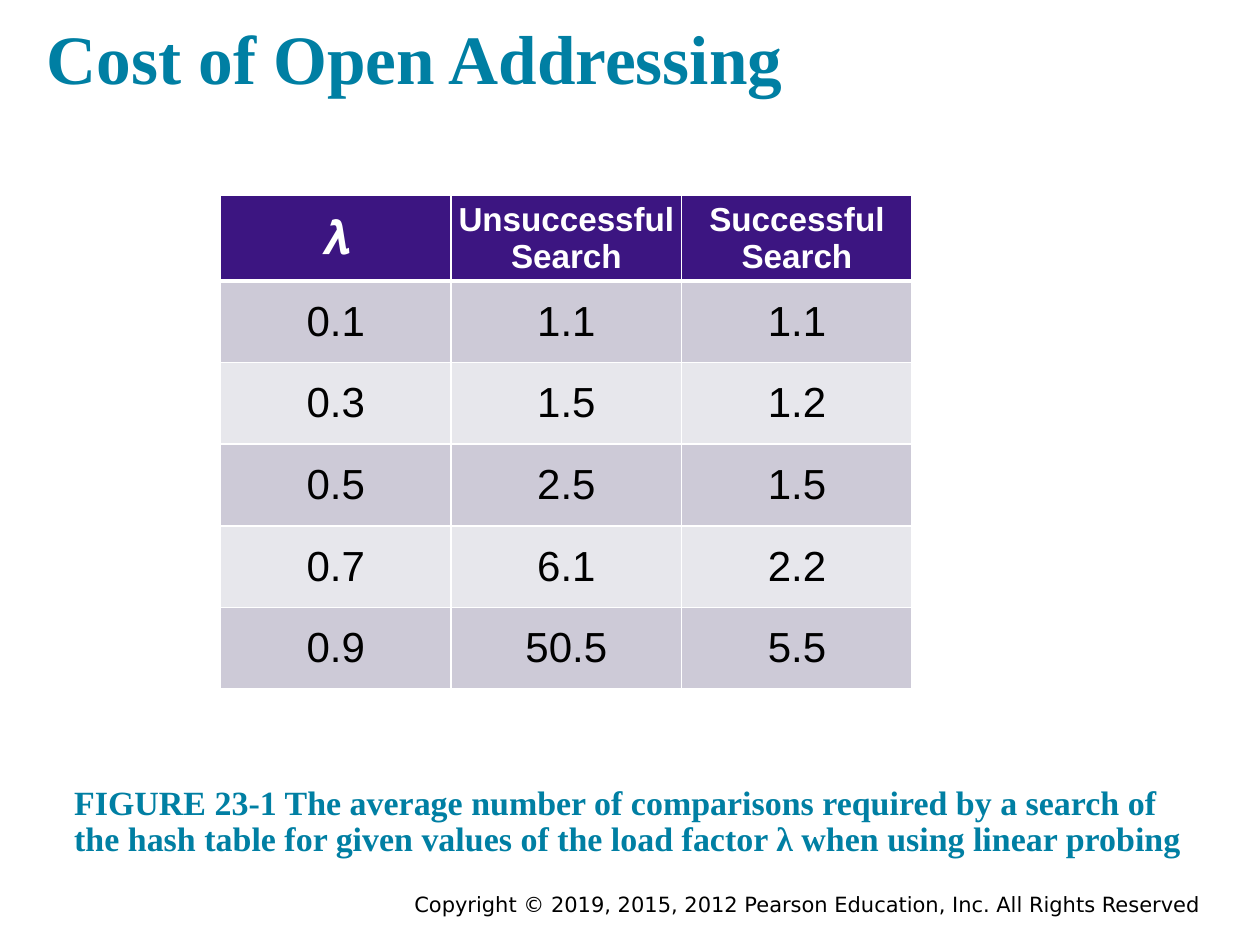
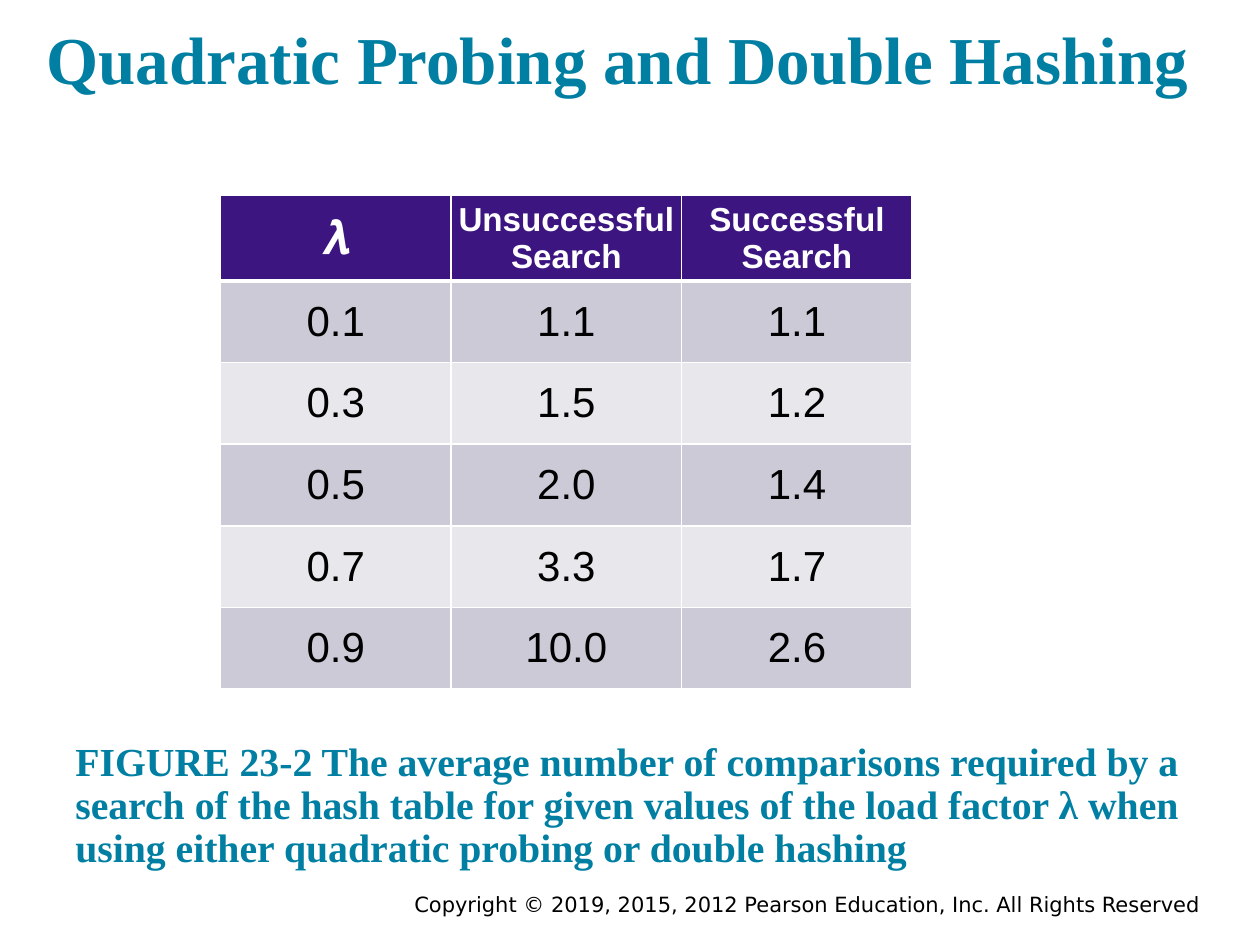
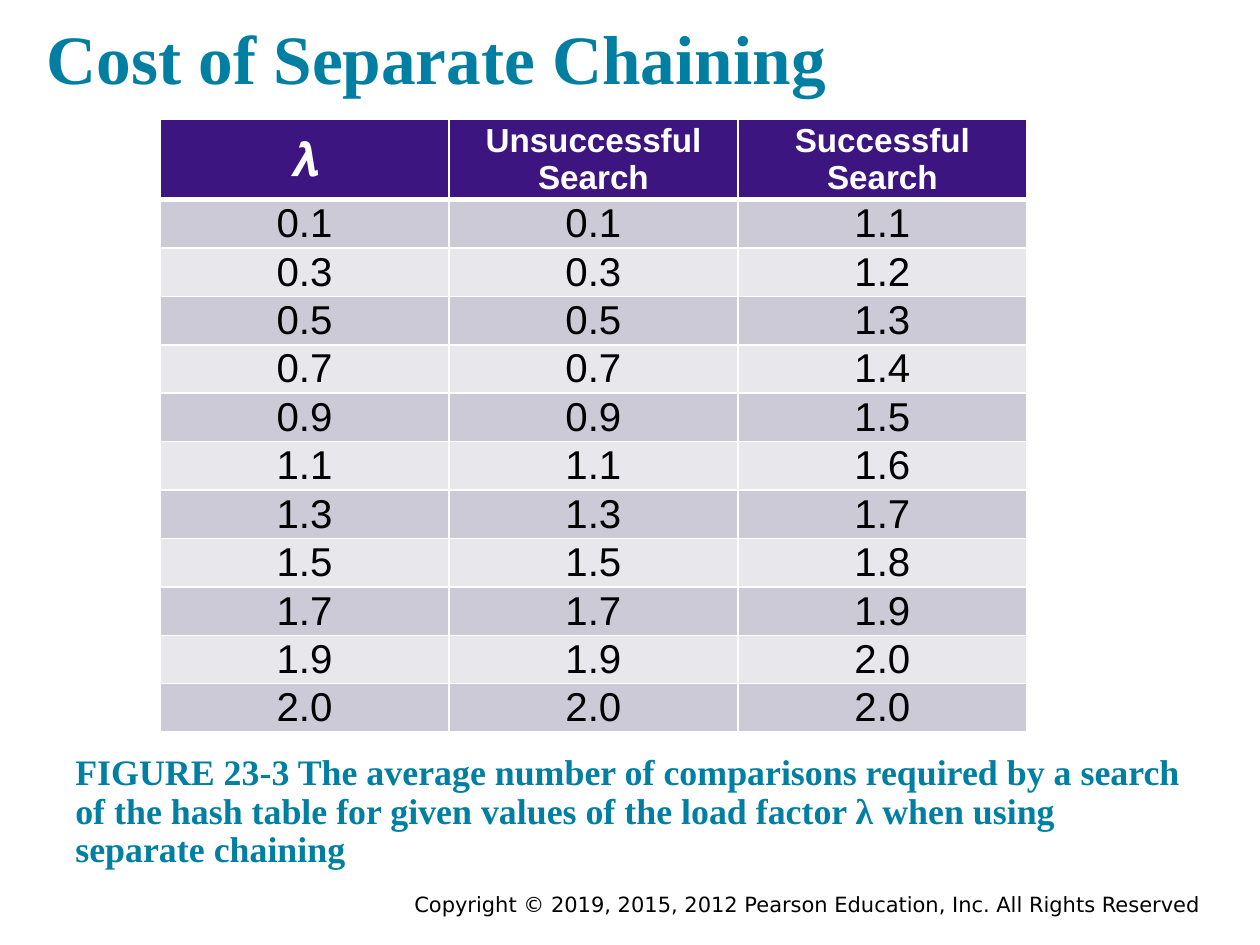
from dataclasses import dataclass

from lxml import etree
from pptx import Presentation
from pptx.dml.color import RGBColor
from pptx.enum.text import MSO_ANCHOR, MSO_AUTO_SIZE, PP_ALIGN
from pptx.oxml.ns import qn
from pptx.util import Inches, Pt

TOP, MIDDLE, BOTTOM = MSO_ANCHOR.TOP, MSO_ANCHOR.MIDDLE, MSO_ANCHOR.BOTTOM
LEFT, CENTER, RIGHT = PP_ALIGN.LEFT, PP_ALIGN.CENTER, PP_ALIGN.RIGHT
GROW = MSO_AUTO_SIZE.SHAPE_TO_FIT_TEXT

TEAL, PURPLE, WHITE, BLACK = "007FA3", "3C1581", "FFFFFF", "000000"
BANDS = ("CDCAD7", "E7E7EC")
SERIF, SANS, SMALL = "Times New Roman", "Arial", "DejaVu Sans"
HEADS = ("𝝀", "Unsuccessful Search", "Successful Search")
HEAD_SIZES = (27, 19, 19)
LEGAL = "Copyright © 2019, 2015, 2012 Pearson Education, Inc. All Rights Reserved"
LEAD = (
    "The average number of comparisons required by a search of the hash table "
    "for given values of the load factor λ when using"
)


@dataclass(frozen=True)
class Box:
    left: float
    top: float
    width: float
    height: float

    def emu(self) -> tuple:
        return tuple(Inches(n) for n in (self.left, self.top, self.width, self.height))


@dataclass(frozen=True)
class Style:
    face: str
    size: float
    color: str
    bold: bool = False
    align: PP_ALIGN = LEFT
    line: float = 1.0


@dataclass(frozen=True)
class Grid:
    box: Box
    head: float
    size: float
    rows: tuple


@dataclass(frozen=True)
class Page:
    title: str
    title_size: float
    figure: str
    method: str
    note_size: float
    note_box: Box
    grid: Grid


TITLE_BOX = Box(0.27, 0, 9.31, 0.88)
LEGAL_BOX = Box(1.75, 7.03, 7.83, 0.31)
SMALL_GRID = Box(1.75, 1.55, 5.49, 3.92)
LARGE_GRID = Box(1.27, 0.95, 6.88, 4.86)

PAGES = (
    Page(
        "Cost of Open Addressing", 39.6,
        "FIGURE 23-1", "linear probing", 19.4, Box(0.49, 5.81, 9, 1.11),
        Grid(SMALL_GRID, 0.68, 24, (
            ("0.1", "1.1", "1.1"),
            ("0.3", "1.5", "1.2"),
            ("0.5", "2.5", "1.5"),
            ("0.7", "6.1", "2.2"),
            ("0.9", "50.5", "5.5"),
        )),
    ),
    Page(
        "Quadratic Probing and Double Hashing", 38.3,
        "FIGURE 23-2", "either quadratic probing or double hashing",
        22.7, Box(0.5, 5.7, 9, 1.31),
        Grid(SMALL_GRID, 0.68, 24, (
            ("0.1", "1.1", "1.1"),
            ("0.3", "1.5", "1.2"),
            ("0.5", "2.0", "1.4"),
            ("0.7", "3.3", "1.7"),
            ("0.9", "10.0", "2.6"),
        )),
    ),
    Page(
        "Cost of Separate Chaining", 39.6,
        "FIGURE 23-3", "separate chaining", 20.5, Box(0.5, 5.86, 9, 1.15),
        Grid(LARGE_GRID, 0.63, 23, (
            ("0.1", "0.1", "1.1"),
            ("0.3", "0.3", "1.2"),
            ("0.5", "0.5", "1.3"),
            ("0.7", "0.7", "1.4"),
            ("0.9", "0.9", "1.5"),
            ("1.1", "1.1", "1.6"),
            ("1.3", "1.3", "1.7"),
            ("1.5", "1.5", "1.8"),
            ("1.7", "1.7", "1.9"),
            ("1.9", "1.9", "2.0"),
            ("2.0", "2.0", "2.0"),
        )),
    ),
)


def color(code: str) -> RGBColor:
    return RGBColor.from_string(code)


def write(frame, text: str, style: Style) -> None:
    para = frame.paragraphs[0]
    para.text = text
    para.alignment = style.align
    para.line_spacing = style.line
    font = para.font
    font.name, font.size, font.bold = style.face, Pt(style.size), style.bold
    font.color.rgb = color(style.color)


def add_text(slide, box: Box, text: str, style: Style, pad: float, anchor: MSO_ANCHOR):
    frame = slide.shapes.add_textbox(*box.emu()).text_frame
    frame.word_wrap = True
    frame.vertical_anchor = anchor
    frame.margin_left = frame.margin_right = Inches(pad)
    frame.margin_top = frame.margin_bottom = Inches(pad)
    write(frame, text, style)
    return frame


def add_edge(cell, side: str, width: float) -> None:
    props = cell._tc.get_or_add_tcPr()
    edge = etree.SubElement(props, qn(f"a:ln{side}"), w=str(Pt(width)))
    fill = etree.SubElement(edge, qn("a:solidFill"))
    etree.SubElement(fill, qn("a:srgbClr"), val=WHITE)


def fill_cell(cell, text: str, style: Style, fill: str, above: float, below: float) -> None:
    cell.margin_left = cell.margin_right = 0
    cell.margin_top = cell.margin_bottom = 0
    cell.vertical_anchor = MIDDLE
    write(cell.text_frame, text, style)
    for side, width in (("L", 1), ("R", 1), ("T", above), ("B", below)):
        add_edge(cell, side, width)
    cell.fill.solid()
    cell.fill.fore_color.rgb = color(fill)


def add_grid(slide, grid: Grid) -> None:
    count = len(grid.rows)
    table = slide.shapes.add_table(count + 1, len(HEADS), *grid.box.emu()).table
    table.horz_banding = False
    for column in table.columns:
        column.width = Inches(grid.box.width / len(HEADS))
    for row in table.rows:
        row.height = Inches((grid.box.height - grid.head) / count)
    table.rows[0].height = Inches(grid.head)
    for col, (text, size) in enumerate(zip(HEADS, HEAD_SIZES)):
        style = Style(SANS, size, WHITE, True, CENTER)
        fill_cell(table.cell(0, col), text, style, PURPLE, 1, 3)
    body = Style(SANS, grid.size, BLACK, align=CENTER)
    for row, values in enumerate(grid.rows):
        above = 1 if row else 3
        for col, text in enumerate(values):
            fill_cell(table.cell(row + 1, col), text, body, BANDS[row % 2], above, 1)


def add_page(deck, page: Page) -> None:
    slide = deck.slides.add_slide(deck.slide_layouts[6])
    legal = add_text(slide, LEGAL_BOX, LEGAL, Style(SMALL, 12, BLACK, align=RIGHT), 0.05, TOP)
    legal.auto_size = GROW
    title = Style(SERIF, page.title_size, TEAL, True)
    add_text(slide, TITLE_BOX, page.title, title, 0.1, BOTTOM)
    note = Style(SERIF, page.note_size, TEAL, True, line=0.9)
    add_text(slide, page.note_box, f"{page.figure} {LEAD} {page.method}", note, 0.1, BOTTOM)
    add_grid(slide, page.grid)


def main() -> None:
    deck = Presentation()
    deck.slide_width, deck.slide_height = Inches(10), Inches(7.5)
    for page in PAGES:
        add_page(deck, page)
    deck.save("out.pptx")


if __name__ == "__main__":
    main()
